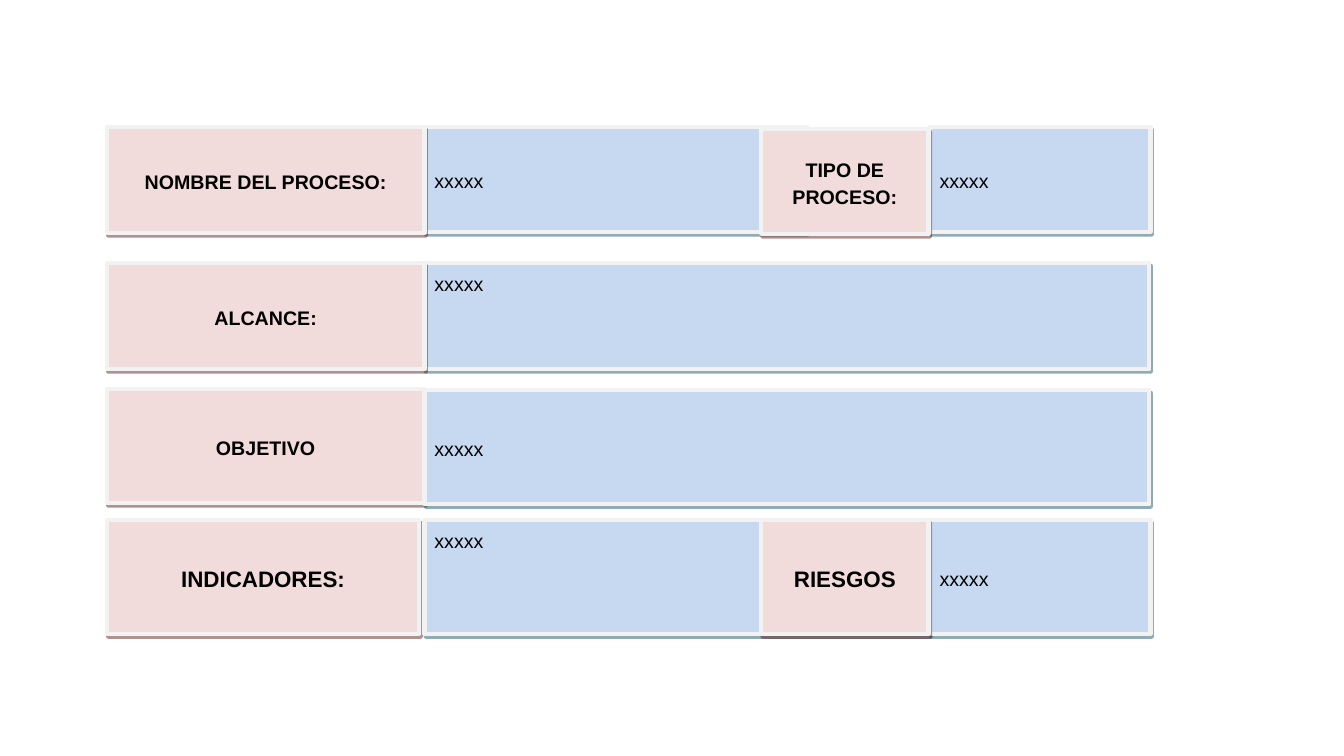
from lxml.etree import SubElement
from pptx import Presentation
from pptx.dml.color import RGBColor
from pptx.enum.shapes import MSO_SHAPE
from pptx.enum.text import MSO_ANCHOR, PP_ALIGN
from pptx.oxml.ns import qn
from pptx.util import Inches, Pt

LABEL_FILL, LABEL_SHADOW = "F2DCDB", "632523"
FIELD_FILL, FIELD_SHADOW = "C6D9F1", "215968"
BORDER, INK = "F2F2F2", "000000"

# Column edges
LABEL_X, FIELD_X, SIDE_LABEL_X, SIDE_FIELD_X = 1.06, 4.21, 7.55, 9.22
LABEL_W, SIDE_LABEL_W, SIDE_FIELD_W, WIDE_W = 3.15, 1.66, 2.19, 7.19


def rgb(value):
    return RGBColor.from_string(value)


def set_shadow(sp, color):
    """Hard half-transparent shadow towards the lower right."""
    sp.shadow.inherit = False
    effects = sp._element.spPr.find(qn("a:effectLst"))
    outer = SubElement(effects, qn("a:outerShdw"), blurRad="0",
                       dist=str(Pt(2.2)), dir=str(63 * 60000),
                       algn="ctr", rotWithShape="0")
    clr = SubElement(outer, qn("a:srgbClr"), val=color)
    SubElement(clr, qn("a:alpha"), val="50000")


def set_text(sp, text, size=14, bold=False, align=PP_ALIGN.LEFT,
             anchor=MSO_ANCHOR.MIDDLE, after=6):
    tf = sp.text_frame
    tf.word_wrap = True
    tf.vertical_anchor = anchor
    p = tf.paragraphs[0]
    p.alignment = align
    p.line_spacing = 1.15
    p.space_after = Pt(after)
    r = p.add_run()
    r.text = text
    r.font.name = "Arial"
    r.font.size = Pt(size)
    r.font.bold = bold
    r.font.color.rgb = rgb(INK)


def add_box(row, x, y, w, h, fill, shadow):
    sp = row.shapes.add_shape(MSO_SHAPE.RECTANGLE, Inches(x), Inches(y),
                              Inches(w), Inches(h))
    sp.fill.solid()
    sp.fill.fore_color.rgb = rgb(fill)
    sp.line.color.rgb = rgb(BORDER)
    sp.line.width = Pt(3)
    set_shadow(sp, shadow)
    return sp


def add_label(row, text, x, y, w, h, **fmt):
    sp = add_box(row, x, y, w, h, LABEL_FILL, LABEL_SHADOW)
    set_text(sp, text, bold=True, align=PP_ALIGN.CENTER, **fmt)


def add_field(row, x, y, w, h, **fmt):
    sp = add_box(row, x, y, w, h, FIELD_FILL, FIELD_SHADOW)
    set_text(sp, "xxxxx", **fmt)


def main():
    prs = Presentation()
    prs.slide_width, prs.slide_height = Inches(13.33), Inches(7.5)
    s = prs.slides.add_slide(prs.slide_layouts[6])
    top = {"anchor": MSO_ANCHOR.TOP, "after": 0}

    # Process name and type
    row = s.shapes.add_group_shape()
    add_field(row, SIDE_FIELD_X, 1.26, SIDE_FIELD_W, 1.04)
    add_field(row, FIELD_X, 1.26, 3.79, 1.04)
    add_label(row, "NOMBRE DEL PROCESO:", LABEL_X, 1.26, LABEL_W, 1.05)
    add_label(row, "TIPO DE PROCESO:", SIDE_LABEL_X, 1.28, SIDE_LABEL_W, 1.04)

    # Scope
    row = s.shapes.add_group_shape()
    add_field(row, FIELD_X, 2.61, WIDE_W, 1.05, **top)
    add_label(row, "ALCANCE:", LABEL_X, 2.61, LABEL_W, 1.05, after=0)

    # Objective
    row = s.shapes.add_group_shape()
    add_label(row, "OBJETIVO", LABEL_X, 3.86, LABEL_W, 1.13)
    add_field(row, FIELD_X, 3.87, WIDE_W, 1.13)

    # Indicators and risks
    row = s.shapes.add_group_shape()
    y, h = 5.16, 1.13
    add_label(row, "INDICADORES:", LABEL_X, y, 3.1, h, size=16)
    add_field(row, FIELD_X, y, SIDE_FIELD_X - FIELD_X, h, **top)
    add_field(row, SIDE_FIELD_X, y, SIDE_FIELD_W, h)
    add_label(row, "RIESGOS", SIDE_LABEL_X, y, SIDE_LABEL_W, h, size=16)

    prs.save("out.pptx")


if __name__ == "__main__":
    main()
